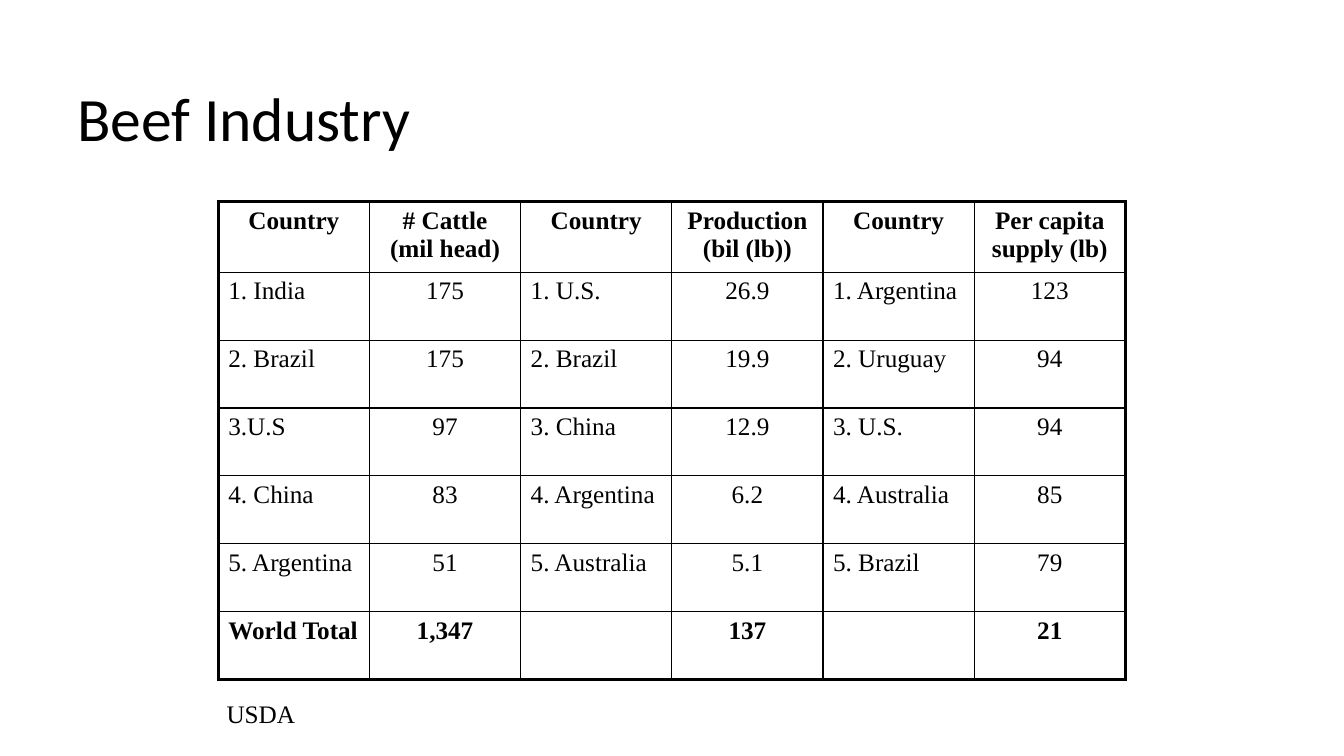
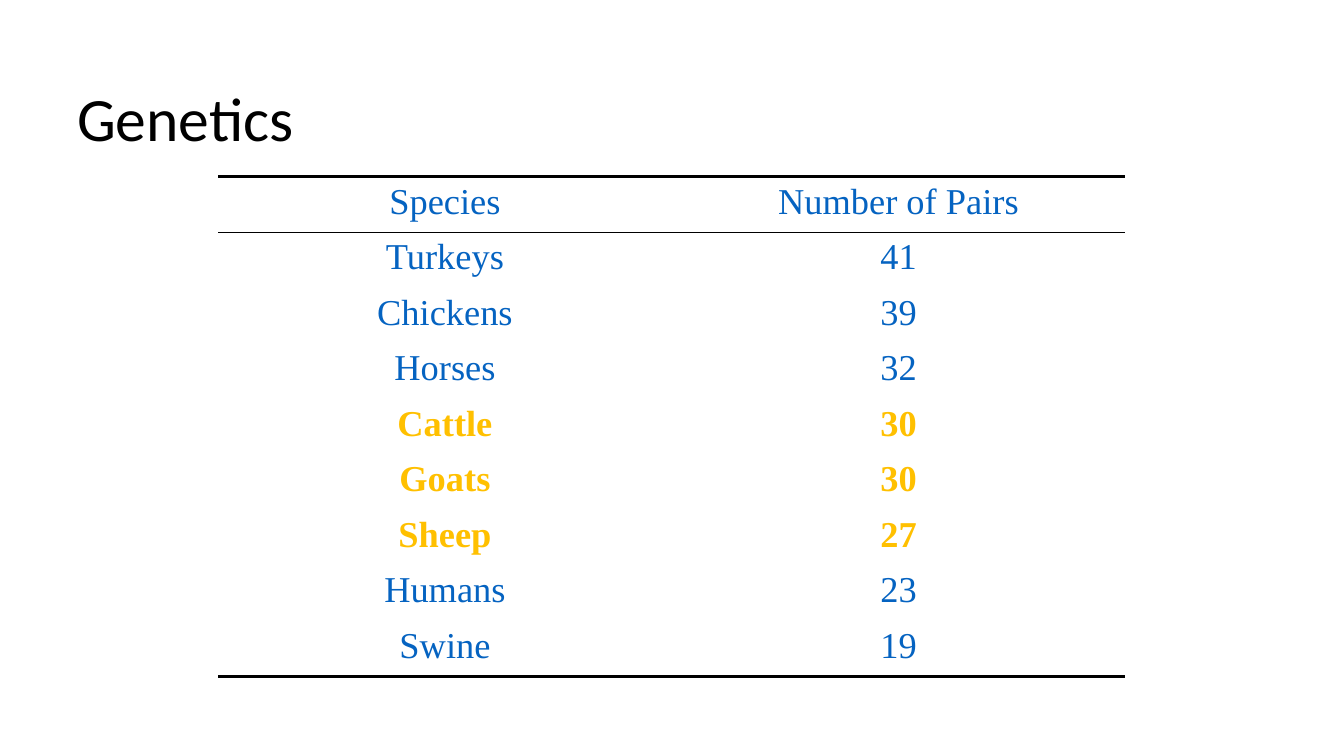
from lxml.etree import SubElement
from pptx import Presentation
from pptx.dml.color import RGBColor
from pptx.enum.text import MSO_ANCHOR, MSO_AUTO_SIZE, PP_ALIGN
from pptx.oxml.ns import qn
from pptx.util import Cm, Pt

BLACK, BLUE, GOLD = "000000", "0563C1", "FFC000"
THICK, THIN, NONE = 2.25, 1, 0

BEEF = [
    ["Country", "# Cattle (mil head)", "Country", "Production (bil (lb))", "Country", "Per capita supply (lb)"],
    ["1. India", "175", "1. U.S.", "26.9", "1. Argentina", "123"],
    ["2. Brazil", "175", "2. Brazil", "19.9", "2. Uruguay", "94"],
    ["3.U.S", "97", "3. China", "12.9", "3. U.S.", "94"],
    ["4. China", "83", "4. Argentina", "6.2", "4. Australia", "85"],
    ["5. Argentina", "51", "5. Australia", "5.1", "5. Brazil", "79"],
    ["World Total", "1,347", "", "137", "", "21"],
]
PAIRS = [
    ["Species", "Number of Pairs"],
    ["Turkeys", "41"],
    ["Chickens", "39"],
    ["Horses", "32"],
    ["Cattle", "30"],
    ["Goats", "30"],
    ["Sheep", "27"],
    ["Humans", "23"],
    ["Swine", "19"],
]
RUMINANTS = {"Cattle", "Goats", "Sheep"}


def rgb(color):
    return RGBColor.from_string(color)


class Deck:
    """Holds the presentation style and the current slide."""

    TITLE_FONT, BODY_FONT = "Calibri", "Times New Roman"
    TABLE_LEFT, TABLE_WIDTH = 5.5, 22.86

    def __init__(self):
        self.prs = Presentation()
        self.prs.slide_width, self.prs.slide_height = Cm(33.87), Cm(19.05)
        self.s = None

    def set_text(self, p, text, size, font=BODY_FONT, color=BLACK, bold=False, align=PP_ALIGN.LEFT):
        p.text = text
        p.alignment = align
        for r in p.runs:
            r.font.name, r.font.size, r.font.bold = font, Pt(size), bold
            r.font.color.rgb = rgb(color)

    def slide(self, title):
        self.s = self.prs.slides.add_slide(self.prs.slide_layouts[5])
        sp = self.s.shapes.title
        sp.left, sp.top, sp.width, sp.height = Cm(1.69), Cm(1.48), Cm(30.48), Cm(3.18)
        tf = sp.text_frame
        tf.vertical_anchor = MSO_ANCHOR.MIDDLE
        p = tf.paragraphs[0]
        p.line_spacing = 0.9
        self.set_text(p, title, 44, self.TITLE_FONT)

    def borders(self, cell, **widths):
        tcPr = cell._tc.get_or_add_tcPr()
        for side, width in widths.items():
            ln = SubElement(tcPr, qn(f"a:ln{side}"), w=str(Pt(width)))
            if width:
                fill = SubElement(ln, qn("a:solidFill"))
                SubElement(fill, qn("a:srgbClr"), val=BLACK)
            else:
                SubElement(ln, qn("a:noFill"))

    def table(self, data, top, heights, size, style, h_rules, v_rules):
        rows, cols = len(data), len(data[0])
        frame = self.s.shapes.add_table(rows, cols, Cm(self.TABLE_LEFT), Cm(top),
                                        Cm(self.TABLE_WIDTH), Cm(sum(heights)))
        tbl = frame.table
        tbl.first_row = tbl.horz_banding = False
        for col in tbl.columns:
            col.width = Cm(self.TABLE_WIDTH / cols)
        for i, values in enumerate(data):
            tbl.rows[i].height = Cm(heights[i])
            for j, text in enumerate(values):
                cell = tbl.cell(i, j)
                self.borders(cell, L=v_rules[j], R=v_rules[j + 1], T=h_rules[i], B=h_rules[i + 1])
                cell.fill.background()
                self.set_text(cell.text_frame.paragraphs[0], text, size, **style(i, j))

    def label(self, text, left, top, width, height):
        tf = self.s.shapes.add_textbox(Cm(left), Cm(top), Cm(width), Cm(height)).text_frame
        tf.word_wrap = False
        tf.auto_size = MSO_AUTO_SIZE.SHAPE_TO_FIT_TEXT
        self.set_text(tf.paragraphs[0], text, 18)


def beef_style(i, j):
    is_name = i > 0 and j % 2 == 0
    return {"bold": i in (0, len(BEEF) - 1), "align": PP_ALIGN.LEFT if is_name else PP_ALIGN.CENTER}


def pairs_style(i, j):
    marked = PAIRS[i][0] in RUMINANTS
    return {"bold": marked, "color": GOLD if marked else BLUE, "align": PP_ALIGN.CENTER}


def main():
    deck = Deck()

    deck.slide("Beef Industry")
    deck.table(BEEF, 5.08, [1.78] + [1.71] * 6, 18, beef_style,
               [THICK] + [THIN] * 6 + [THICK], [THICK] + [THIN] * 5 + [THICK])
    deck.label("USDA", 5.46, 17.48, 2.24, 1.02)

    deck.slide("Genetics")
    deck.table(PAIRS, 4.45, [1.4] * 9, 26, pairs_style,
               [THICK, THIN] + [NONE] * 7 + [THICK], [NONE] * 3)

    deck.prs.save("out.pptx")


if __name__ == "__main__":
    main()
